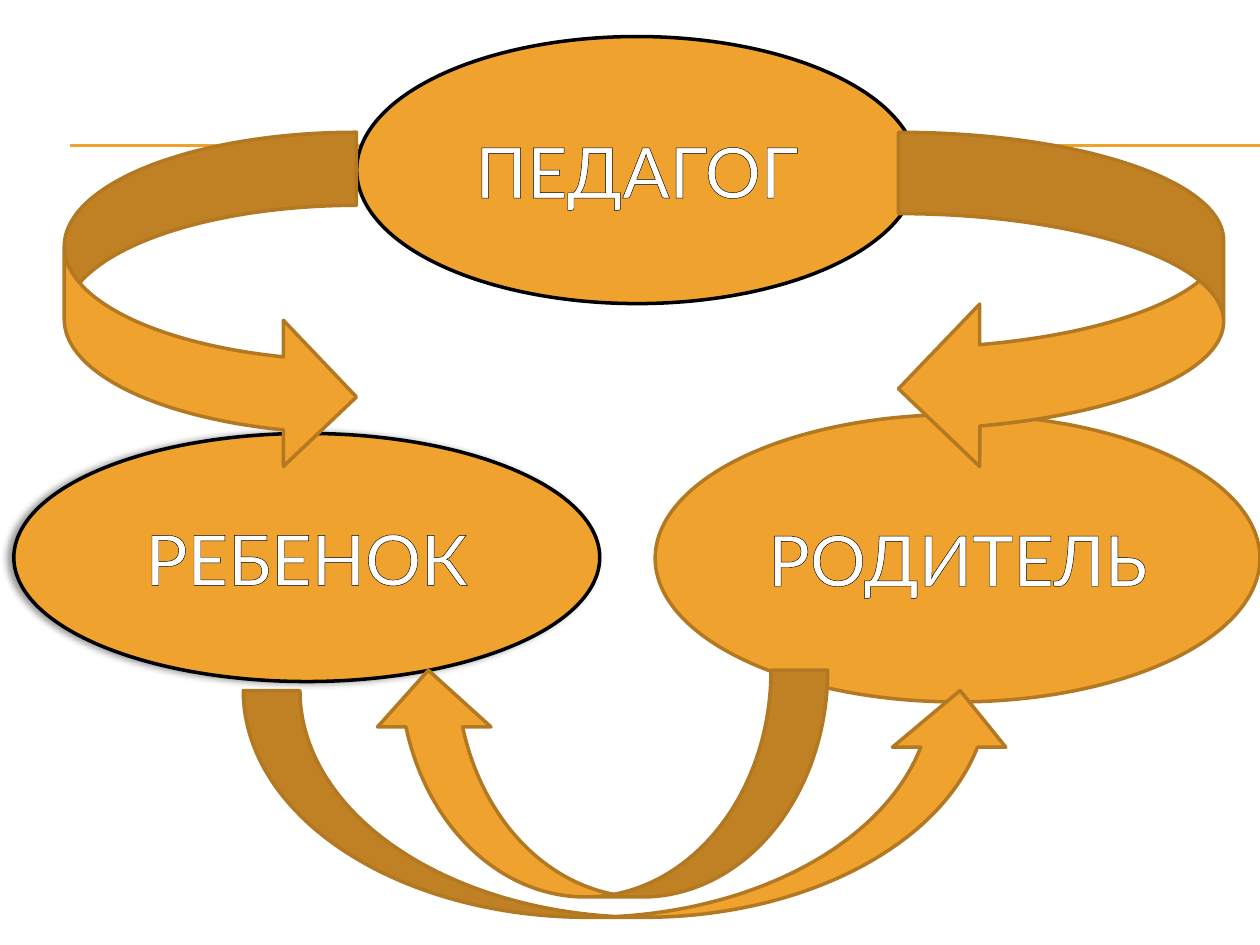
from lxml.etree import SubElement
from pptx import Presentation
from pptx.dml.color import RGBColor
from pptx.enum.shapes import MSO_CONNECTOR, MSO_SHAPE as SHAPE
from pptx.enum.text import MSO_ANCHOR, PP_ALIGN
from pptx.oxml import parse_xml
from pptx.oxml.ns import nsdecls, qn
from pptx.util import Pt

ORANGE = RGBColor(0xF0, 0xA2, 0x2E)
BROWN = RGBColor(0xB2, 0x78, 0x22)
BLACK = RGBColor(0, 0, 0)
WHITE = RGBColor(0xFF, 0xFF, 0xFF)

deck = Presentation()
deck.slide_width, deck.slide_height = Pt(720), Pt(540)
slide = deck.slides.add_slide(deck.slide_layouts[6])


def add_filled(kind, bounds, line_color):
    shape = slide.shapes.add_shape(kind, *[Pt(length) for length in bounds])
    shape.shadow.inherit = False
    shape.fill.solid()
    shape.fill.fore_color.rgb = ORANGE
    shape.line.color.rgb = line_color
    shape.line.width = Pt(2)
    return shape


# Double rule behind the diagram
for y in (82.8, 83.5):
    rule = slide.shapes.add_connector(MSO_CONNECTOR.STRAIGHT, Pt(40.3), Pt(y), Pt(720), Pt(y))
    rule.line.color.rgb = ORANGE
    rule.line.width = Pt(0.75)
    SubElement(rule._element.spPr, qn("a:effectLst"))

# Participants, with outlined lettering
participants = {}
for name, bounds, line_color in (
    ("ПЕДАГОГ", (203.8, 20.9, 320.4, 152.6), BLACK),
    ("РЕБЕНОК", (7.9, 247.7, 334.8, 141.8), BLACK),
    ("РОДИТЕЛЬ", (374.4, 236.9, 345.6, 164.2), BROWN),
):
    oval = add_filled(SHAPE.OVAL, bounds, line_color)
    participants[name] = oval
    frame = oval.text_frame
    frame.word_wrap = True
    frame.vertical_anchor = MSO_ANCHOR.MIDDLE
    para = frame.paragraphs[0]
    para.alignment = PP_ALIGN.CENTER
    span = para.add_run()
    span.text = name
    span.font.name = "Lato"
    span.font.size = Pt(40)
    span.font.color.rgb = WHITE
    outline = parse_xml(
        f'<a:ln {nsdecls("a")} w="{Pt(0.75)}"><a:solidFill>'
        f'<a:srgbClr val="{BLACK}"/></a:solidFill></a:ln>'
    )
    span.font._element.insert(0, outline)

# Soft shadow to the left of the child oval
effects = participants["РЕБЕНОК"]._element.spPr.find(qn("a:effectLst"))
effects.append(parse_xml(
    f'<a:outerShdw {nsdecls("a")} blurRad="{Pt(4)}" dist="{Pt(3)}" dir="10800000" '
    f'rotWithShape="0"><a:srgbClr val="{BLACK}"><a:alpha val="40000"/></a:srgbClr></a:outerShdw>'
))

# Curved arrows between the participants
for kind, bounds, mirrored in (
    (SHAPE.CURVED_RIGHT_ARROW, (36.7, 75.6, 167, 193), False),
    (SHAPE.CURVED_UP_ARROW, (139, 394.6, 442, 129.6), False),
    (SHAPE.CURVED_LEFT_ARROW, (513.4, 75.6, 185.8, 193), False),
    (SHAPE.CURVED_UP_ARROW, (212.4, 383, 260.6, 129.6), True),
):
    arrow = add_filled(kind, bounds, BROWN)
    if mirrored:
        arrow._element.spPr.xfrm.set("flipH", "1")

deck.save("out.pptx")
